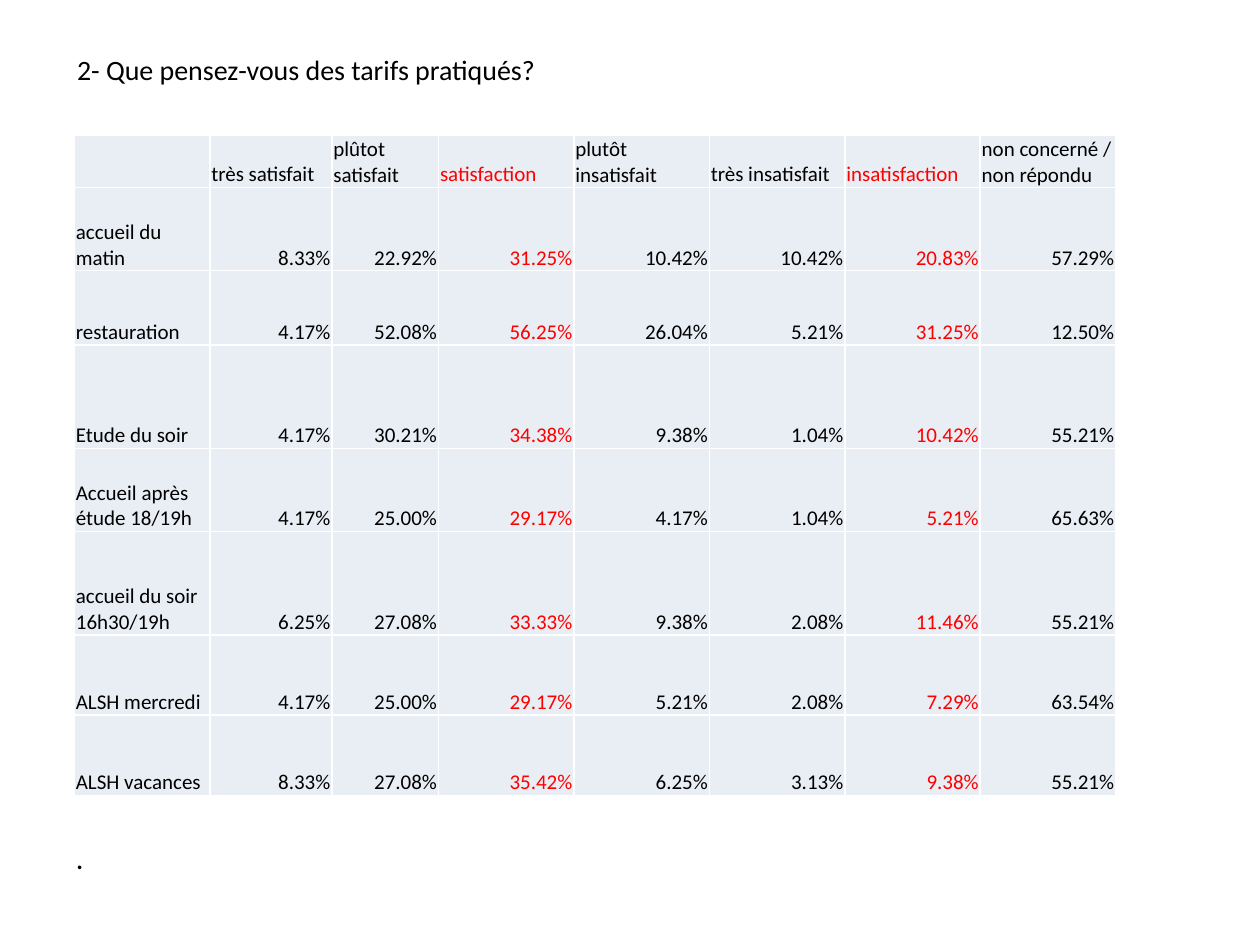
from pptx import Presentation
from pptx.dml.color import RGBColor
from pptx.enum.text import MSO_ANCHOR, MSO_AUTO_SIZE, PP_ALIGN
from pptx.util import Cm, Pt

LEFT, RIGHT = PP_ALIGN.LEFT, PP_ALIGN.RIGHT
MIDDLE, BOTTOM = MSO_ANCHOR.MIDDLE, MSO_ANCHOR.BOTTOM
FIT_SHAPE = MSO_AUTO_SIZE.SHAPE_TO_FIT_TEXT
TITLE_ONLY = 5
BLACK, RED, PALE_BLUE = "000000", "FF0000", "E9EDF4"

TITLE = "2- Que pensez-vous des tarifs pratiqués?"
FOOTER = "."
HEADER = ["", "très satisfait", "plûtot satisfait", "satisfaction",
          "plutôt insatisfait", "très insatisfait", "insatisfaction",
          "non concerné / non répondu"]
ANSWERS = [
    ("accueil du matin", 8.33, 22.92, 31.25, 10.42, 10.42, 20.83, 57.29),
    ("restauration", 4.17, 52.08, 56.25, 26.04, 5.21, 31.25, 12.50),
    ("Etude du soir", 4.17, 30.21, 34.38, 9.38, 1.04, 10.42, 55.21),
    ("Accueil après étude 18/19h", 4.17, 25.00, 29.17, 4.17, 1.04, 5.21, 65.63),
    ("accueil du soir 16h30/19h", 6.25, 27.08, 33.33, 9.38, 2.08, 11.46, 55.21),
    ("ALSH mercredi", 4.17, 25.00, 29.17, 5.21, 2.08, 7.29, 63.54),
    ("ALSH vacances", 8.33, 27.08, 35.42, 6.25, 3.13, 9.38, 55.21),
]
TOTAL_COLUMNS = {HEADER.index("satisfaction"), HEADER.index("insatisfaction")}
COLUMN_WIDTHS = [2.73, 2.46, 2.15] + [2.73] * 5
ROW_HEIGHTS = [0.97, 1.68, 1.5, 2.08, 1.68, 2.08, 1.62, 1.62]


def color(hex_text):
    return RGBColor.from_string(hex_text)


def write(frame, text, size, text_color=BLACK, align=LEFT):
    frame.text = text
    paragraph = frame.paragraphs[0]
    paragraph.alignment = align
    for span in paragraph.runs:
        span.font.name = "Calibri"
        span.font.size = Pt(size)
        span.font.color.rgb = color(text_color)


def add_title(page):
    title = page.shapes.title
    title.left, title.top, title.width, title.height = (
        Cm(1.3), Cm(0.92), Cm(22.86), Cm(0.94))
    frame = title.text_frame
    write(frame, TITLE, 16)
    frame.word_wrap = True
    frame.auto_size = FIT_SHAPE
    frame.vertical_anchor = MIDDLE


def add_answer_table(page):
    rows = [HEADER] + [
        [label] + [f"{value:.2f}%" for value in values]
        for label, *values in ANSWERS]
    table = page.shapes.add_table(
        len(rows), len(HEADER), Cm(1.5), Cm(2.73),
        Cm(sum(COLUMN_WIDTHS)), Cm(sum(ROW_HEIGHTS))).table
    table.first_row = table.horz_banding = False
    for column, width in zip(table.columns, COLUMN_WIDTHS):
        column.width = Cm(width)
    for row, height in zip(table.rows, ROW_HEIGHTS):
        row.height = Cm(height)

    for r, texts in enumerate(rows):
        for c, text in enumerate(texts):
            cell = table.cell(r, c)
            cell.fill.solid()
            cell.fill.fore_color.rgb = color(PALE_BLUE)
            cell.margin_left = cell.margin_right = cell.margin_top = Cm(0.03)
            cell.margin_bottom = 0
            cell.vertical_anchor = BOTTOM
            write(cell.text_frame, text, 12,
                  RED if c in TOTAL_COLUMNS else BLACK,
                  RIGHT if r and c else LEFT)


def add_footer(page):
    box = page.shapes.add_textbox(Cm(1.3), Cm(16.92), Cm(22.81), Cm(0.86))
    frame = box.text_frame
    write(frame, FOOTER, 14)
    frame.word_wrap = True
    frame.auto_size = FIT_SHAPE
    font = frame.paragraphs[0].runs[0].font
    font.bold = font.italic = True


def main():
    deck = Presentation()
    deck.slide_width, deck.slide_height = Cm(25.4), Cm(19.05)
    page = deck.slides.add_slide(deck.slide_layouts[TITLE_ONLY])
    add_title(page)
    add_answer_table(page)
    add_footer(page)
    deck.save("out.pptx")


if __name__ == "__main__":
    main()
